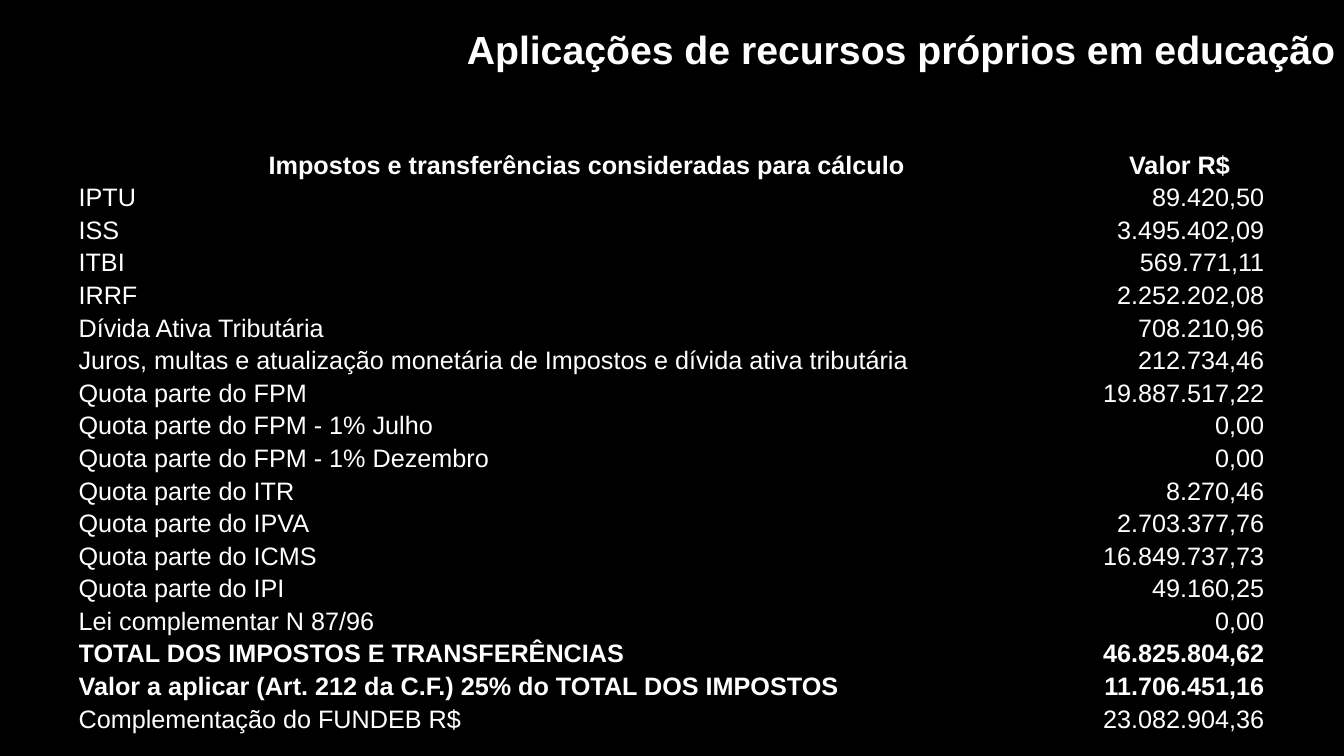
import pptx
import pptx.dml.color
import pptx.enum.text
import pptx.oxml.ns
import pptx.util
from lxml import etree

Inches = pptx.util.Inches
Align = pptx.enum.text.PP_ALIGN
Anchor = pptx.enum.text.MSO_ANCHOR

# Content: label, value, columns the label spans, bold
TITLE = "Aplicações de recursos próprios em educação"
HEADER = ("Impostos e transferências consideradas para cálculo", "Valor R$", 6, True)
ROWS = [
    HEADER,
    ("IPTU", "89.420,50", 1, False),
    ("ISS", "3.495.402,09", 1, False),
    ("ITBI", "569.771,11", 1, False),
    ("IRRF", "2.252.202,08", 1, False),
    ("Dívida Ativa Tributária", "708.210,96", 2, False),
    ("Juros, multas e atualização monetária de Impostos e dívida ativa tributária",
     "212.734,46", 5, False),
    ("Quota parte do FPM", "19.887.517,22", 2, False),
    ("Quota parte do FPM - 1% Julho", "0,00", 2, False),
    ("Quota parte do FPM - 1% Dezembro", "0,00", 2, False),
    ("Quota parte do ITR", "8.270,46", 2, False),
    ("Quota parte do IPVA", "2.703.377,76", 2, False),
    ("Quota parte do ICMS", "16.849.737,73", 2, False),
    ("Quota parte do IPI", "49.160,25", 2, False),
    ("Lei complementar N 87/96", "0,00", 2, False),
    ("TOTAL DOS IMPOSTOS E TRANSFERÊNCIAS", "46.825.804,62", 3, True),
    ("Valor a aplicar (Art. 212 da C.F.) 25% do TOTAL DOS IMPOSTOS",
     "11.706.451,16", 5, True),
    ("Complementação do FUNDEB R$", "23.082.904,36", 2, False),
]
COLUMN_WIDTHS = [1.85, 2.36, 1.57, 1.27, 1.46, 1.57, 1.68]
TABLE_HEIGHT = 5.82
COLORS = {"background": "000000", "border": "000000", "text": "FFFFFF"}
FONT = "Arial"
PLAIN_TABLE_STYLE = "{2D5ABB26-0587-4C30-8999-92F81FD0307C}"


def color(name):
    return pptx.dml.color.RGBColor.from_string(COLORS[name])


def write(frame, text, size, bold, align):
    para = frame.paragraphs[0]
    para.text = text
    para.alignment = align
    para.font.name = FONT
    para.font.size = pptx.util.Pt(size)
    para.font.bold = bold
    para.font.color.rgb = color("text")


def add_borders(cell, sides):
    properties = cell._tc.get_or_add_tcPr()
    for side in sides:
        line = etree.SubElement(properties, pptx.oxml.ns.qn(f"a:ln{side}"),
                                w=str(pptx.util.Pt(0.5)))
        fill = etree.SubElement(line, pptx.oxml.ns.qn("a:solidFill"))
        etree.SubElement(fill, pptx.oxml.ns.qn("a:srgbClr"), val=COLORS["border"])


deck = pptx.Presentation()
deck.slide_width, deck.slide_height = Inches(13.33), Inches(7.5)
page = deck.slides.add_slide(deck.slide_layouts[6])
page.background.fill.solid()
page.background.fill.fore_color.rgb = color("background")

# Title
box = page.shapes.add_textbox(Inches(2.67), Inches(0.2), Inches(10.67), Inches(0.57))
box.text_frame.word_wrap = True
write(box.text_frame, TITLE, 28, True, Align.RIGHT)

# Table of taxes and transfers
value_column = len(COLUMN_WIDTHS) - 1
graphic = page.shapes.add_table(len(ROWS), len(COLUMN_WIDTHS), Inches(0.78), Inches(1.48),
                                Inches(sum(COLUMN_WIDTHS)), Inches(TABLE_HEIGHT))
table = graphic.table
table.first_row = table.horz_banding = False
for style in table._tbl.iter(pptx.oxml.ns.qn("a:tableStyleId")):
    style.text = PLAIN_TABLE_STYLE
for column, width in zip(table.columns, COLUMN_WIDTHS):
    column.width = Inches(width)

for row, (label, value, span, bold) in enumerate(ROWS):
    table.rows[row].height = Inches(TABLE_HEIGHT / len(ROWS))
    label_align, value_align = (
        (Align.CENTER, Align.CENTER) if row == 0 else (Align.LEFT, Align.RIGHT))
    for column in range(len(COLUMN_WIDTHS)):
        cell = table.cell(row, column)
        cell.margin_left = cell.margin_right = cell.margin_top = cell.margin_bottom = 0
        cell.vertical_anchor = Anchor.MIDDLE
        left = "L" if column in (0, value_column) else ""
        right = "R" if column >= value_column - 1 else ""
        add_borders(cell, left + right + "TB")
        cell.fill.background()
        text = {0: label, value_column: value}.get(column, "")
        write(cell.text_frame, text, 18, bold,
              value_align if column == value_column else label_align)
    if span > 1:
        table.cell(row, 0).merge(table.cell(row, span - 1))

deck.save("out.pptx")
